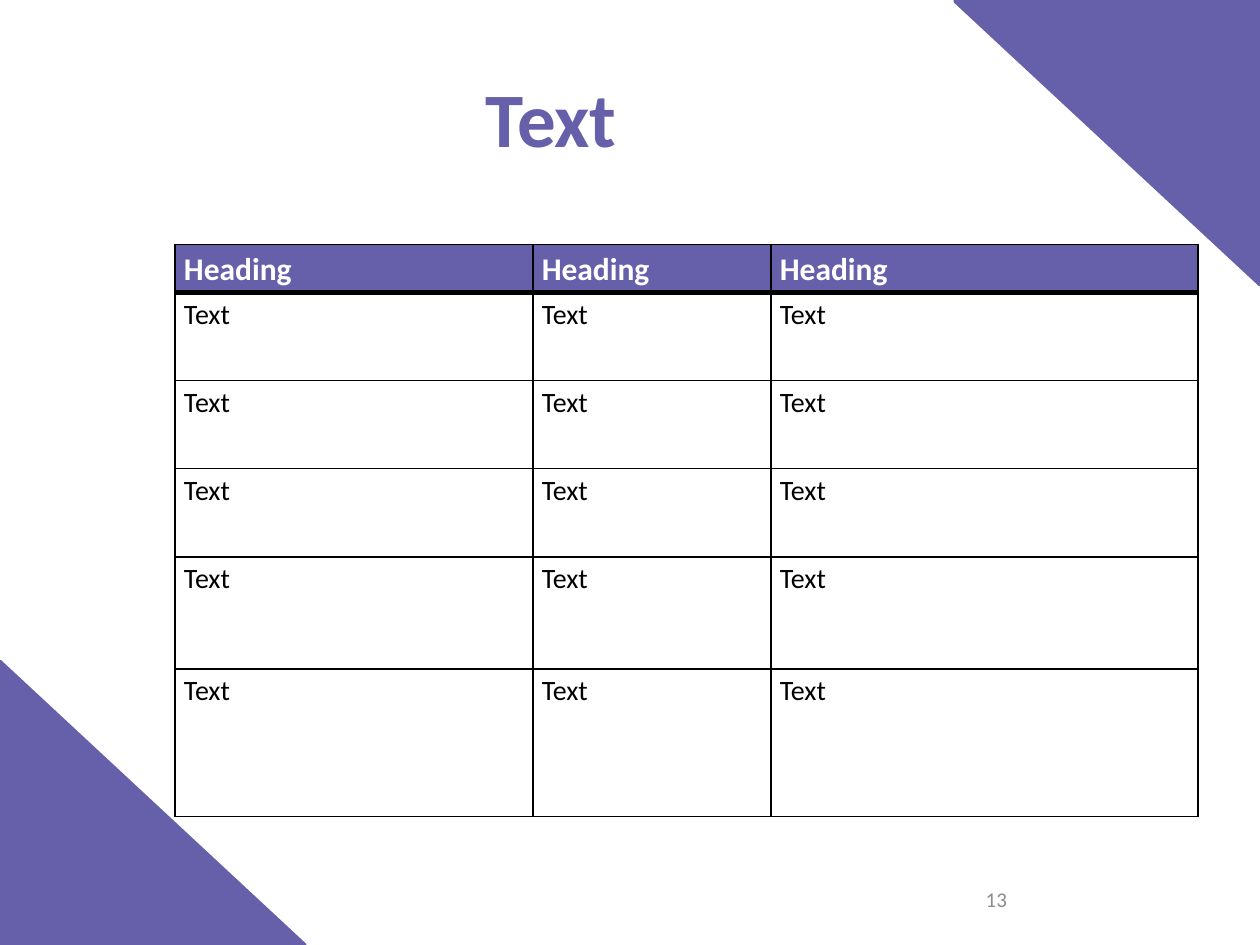
from lxml import etree
from pptx import Presentation
from pptx import util as u
from pptx.dml.color import RGBColor
from pptx.enum import shapes, text
from pptx.oxml import ns

PURPLE, BLACK, WHITE, GREY = "6660AB", "000000", "FFFFFF", "8C8C8C"
COLUMN_WIDTHS = [2.84, 1.89, 3.39]
ROW_HEIGHTS = [0.38, 0.7, 0.7, 0.7, 0.89, 1.17]
ROWS = [["Heading"] * 3] + [["Text"] * 3 for _ in ROW_HEIGHTS[1:]]
HEADING = {"size": u.Pt(18), "bold": True}
BODY = {"size": u.Pt(16), "bold": False}
CELL_MARGINS = {"margin_left": u.Inches(0.07), "margin_right": u.Inches(0.07),
                "margin_top": 0, "margin_bottom": 0}
CELL_SPACING = {"line_spacing": 1.15, "space_after": u.Pt(10)}


def rgb(value):
    return RGBColor.from_string(value)


def inches(box):
    return [u.Inches(length) for length in box]


def set_all(target, values):
    for name, value in values.items():
        setattr(target, name, value)


def write(paragraph, words, color, font):
    run = paragraph.add_run()
    run.text = words
    set_all(run.font, {"name": "Calibri", **font})
    run.font.color.rgb = rgb(color)


def add_label(slide, box, words, color, font, align):
    frame = slide.shapes.add_textbox(*inches(box)).text_frame
    set_all(frame, {"word_wrap": True, "vertical_anchor": text.MSO_ANCHOR.MIDDLE})
    frame.paragraphs[0].alignment = align
    write(frame.paragraphs[0], words, color, font)


def add_corner(slide, box, rotation=0):
    corner = slide.shapes.add_shape(shapes.MSO_SHAPE.RIGHT_TRIANGLE, *inches(box))
    corner.rotation = rotation
    corner.shadow.inherit = False
    corner.fill.solid()
    corner.fill.fore_color.rgb = rgb(PURPLE)
    corner.line.color.rgb = rgb(PURPLE)
    corner.line.width = u.Pt(2)


def add_borders(cell, top, bottom):
    """Draw black cell borders; top and bottom are widths in points."""
    properties = cell._tc.get_or_add_tcPr()
    for side, width in {"L": 1, "R": 1, "T": top, "B": bottom}.items():
        border = etree.SubElement(properties, ns.qn(f"a:ln{side}"), w=str(u.Pt(width)))
        fill = etree.SubElement(border, ns.qn("a:solidFill"))
        etree.SubElement(fill, ns.qn("a:srgbClr"), val=BLACK)


def add_text_table(slide, box):
    frame = slide.shapes.add_table(len(ROWS), len(COLUMN_WIDTHS), *inches(box))
    table = frame.table
    for column, width in zip(table.columns, COLUMN_WIDTHS):
        column.width = u.Inches(width)
    for row_number, (row, height) in enumerate(zip(table.rows, ROW_HEIGHTS)):
        row.height = u.Inches(height)
        is_heading = row_number == 0
        for cell, words in zip(row.cells, ROWS[row_number]):
            set_all(cell, CELL_MARGINS)
            add_borders(cell, 3 if row_number == 1 else 1, 3 if is_heading else 1)
            if is_heading:
                cell.fill.solid()
                cell.fill.fore_color.rgb = rgb(PURPLE)
            else:
                cell.fill.background()
            paragraph = cell.text_frame.paragraphs[0]
            set_all(paragraph, CELL_SPACING)
            write(paragraph, words, WHITE if is_heading else BLACK,
                  HEADING if is_heading else BODY)


def add_title(slide, box):
    slide.shapes.title.left, slide.shapes.title.top = inches(box[:2])
    slide.shapes.title.width, slide.shapes.title.height = inches(box[2:])
    frame = slide.shapes.title.text_frame
    frame.vertical_anchor = text.MSO_ANCHOR.MIDDLE
    frame.paragraphs[0].alignment = text.PP_ALIGN.CENTER
    write(frame.paragraphs[0], "Text", PURPLE, {"size": u.Pt(44), "bold": True})


def main():
    deck = Presentation()
    deck.slide_width, deck.slide_height = inches((10, 7.5))
    slide = deck.slides.add_slide(deck.slide_layouts[6])
    add_label(slide, (7.17, 6.92, 0.92, 0.43), "13", GREY,
              {"size": u.Pt(12)}, text.PP_ALIGN.RIGHT)
    add_corner(slide, (0, 5.25, 2.42, 2.25))
    add_corner(slide, (7.58, 0.01, 2.42, 2.25), rotation=180)
    add_label(slide, (0.5, 0.3, 7.75, 1.25), "Text", PURPLE,
              {"size": u.Pt(44), "bold": True}, text.PP_ALIGN.CENTER)
    add_text_table(slide, (1.39, 1.94, sum(COLUMN_WIDTHS), sum(ROW_HEIGHTS)))
    deck.save("out.pptx")


if __name__ == "__main__":
    main()
